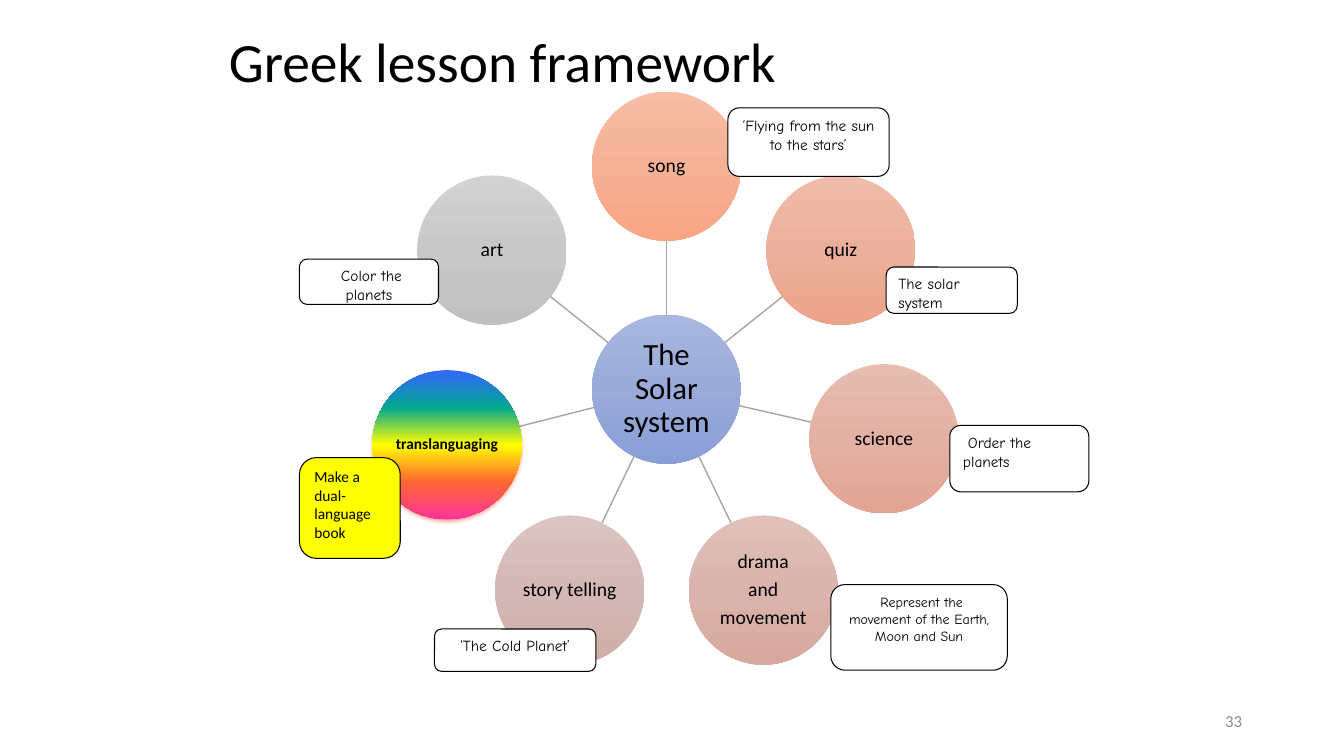
from dataclasses import dataclass
from math import cos, hypot, pi, sin

from lxml import etree
from pptx import Presentation
from pptx.dml.color import RGBColor
from pptx.enum.shapes import MSO_CONNECTOR, MSO_SHAPE
from pptx.enum.text import MSO_ANCHOR, MSO_AUTO_SIZE, PP_ALIGN
from pptx.oxml.ns import qn
from pptx.util import Inches, Pt

LEFT, CENTER, RIGHT = PP_ALIGN.LEFT, PP_ALIGN.CENTER, PP_ALIGN.RIGHT
TOP, MIDDLE = MSO_ANCHOR.TOP, MSO_ANCHOR.MIDDLE
OVAL, ROUNDED = MSO_SHAPE.OVAL, MSO_SHAPE.ROUNDED_RECTANGLE


@dataclass(frozen=True)
class Theme:
    body: str = "Calibri"
    note: str = "Comic Neue"
    ink: str = "000000"
    muted: str = "8C8C8C"
    spoke: str = "A5A5A5"
    paper: str = "FFFFFF"
    highlight: str = "FFFF00"
    glow: str = "FF0000"
    title_size: float = 39.6
    hub_size: int = 22
    topic_size: int = 14
    page_size: int = 12
    small_size: int = 11
    tiny_size: int = 10


THEME = Theme()
SLIDE_W, SLIDE_H = 13.33, 7.5

# Frames are left, top, width and height in percent of the slide
TITLE = ("Greek lesson framework", (16.28, 4, 67.52, 9.2))
PAGE_NUMBER = ("33", (70.67, 92.67, 22.5, 5.33))
HUB = ("The Solar system", ("A8B7DF", "9AABD9", "889ED7"))
RAINBOW = ("3366FF", "01A78F", "FFFF00", "FF6633", "FF3399")

# Clockwise from the top: lines of text, colours from top to bottom
TOPICS = [
    (["song"], ("F7BDA5", "F5B196", "F8A582")),
    (["quiz"], ("EFBCAA", "EBB09C", "ECA389")),
    (["science"], ("E7BDB1", "E2B1A3", "E1A493")),
    (["drama", "and", "movement"], ("E0C0B9", "DAB4AC", "D7A89E")),
    (["story telling"], ("DBC4C1", "D3B8B5", "CFAEA9")),
    (["translanguaging"], RAINBOW),
    (["art"], ("D2D2D2", "C8C8C8", "C0C0C0")),
]
NUDGES = {"translanguaging": (-0.02, 0.06)}

# Text, frame, alignment, first-line indent in inches
NOTES = [
    ("Color the planets", (22.28, 34.27, 10.35, 6), CENTER, 0.05),
    ("Make a dual-language book", (22.28, 60.53, 7.5, 13.33), LEFT, 0),
    ("‘Flying from the sun to the stars’", (54.16, 14.27, 12, 9.07), CENTER, 0),
    ("The solar system", (65.94, 35.33, 9.75, 6.13), LEFT, 0),
    ("Order the planets", (70.67, 56.27, 10.35, 8.8), LEFT, 0.05),
    ("Represent the movement of the Earth, Moon and Sun",
     (61.82, 77.33, 13.13, 11.33), CENTER, 0.05),
    ("‘The Cold Planet’", (32.33, 83.2, 12, 5.6), CENTER, 0),
]
NOTE_STYLES = {
    "Make a dual-language book": {"font": THEME.body, "fill": THEME.highlight},
    "Represent the movement of the Earth, Moon and Sun": {"size": THEME.tiny_size},
}

HUB_X, HUB_Y = 0.4959 * SLIDE_W, 0.5147 * SLIDE_H
RADIUS, RING = 0.74, 0.295 * SLIDE_H


def color(value):
    return RGBColor.from_string(value)


def place(frame):
    left, top, width, height = frame
    return (Inches(left / 100 * SLIDE_W), Inches(top / 100 * SLIDE_H),
            Inches(width / 100 * SLIDE_W), Inches(height / 100 * SLIDE_H))


def write(box, lines, size, font=THEME.body, ink=THEME.ink, bold=False,
          align=LEFT, anchor=TOP, margin=None, indent=0, **spacing):
    frame = box.text_frame
    settings = {"word_wrap": True, "auto_size": MSO_AUTO_SIZE.NONE,
                "vertical_anchor": anchor}
    if margin is not None:
        for side in ("left", "top", "right", "bottom"):
            settings[f"margin_{side}"] = Inches(margin)
    for name, value in settings.items():
        setattr(frame, name, value)
    for index, line in enumerate(lines):
        para = frame.add_paragraph() if index else frame.paragraphs[0]
        for name, value in {"alignment": align, **spacing}.items():
            setattr(para, name, value)
        if indent:
            para._p.get_or_add_pPr().set("indent", str(Inches(indent)))
        span = para.add_run()
        span.text = line
        for name, value in {"name": font, "size": Pt(size), "bold": bold}.items():
            setattr(span.font, name, value)
        span.font.color.rgb = color(ink)


def shade(shape, colors):
    """Fill from top to bottom with evenly spaced colours."""
    shape.fill.gradient()
    shape.fill.gradient_angle = 270
    stops = shape._element.spPr.find(".//" + qn("a:gsLst"))
    for stop in list(stops):
        stops.remove(stop)
    for index, value in enumerate(colors):
        position = round(100000 * index / (len(colors) - 1))
        stop = etree.SubElement(stops, qn("a:gs"), pos=str(position))
        etree.SubElement(stop, qn("a:srgbClr"), val=value)


def add_glow(shape):
    effects = shape._element.spPr.find(qn("a:effectLst"))
    shadow = etree.SubElement(
        effects, qn("a:outerShdw"), blurRad=str(Pt(3.1)), dist=str(Pt(1.6)),
        dir="5400000", rotWithShape="0")
    tint = etree.SubElement(shadow, qn("a:srgbClr"), val=THEME.glow)
    etree.SubElement(tint, qn("a:alpha"), val="38000")


def add_circle(page, x, y, lines, colors, size, bold=False):
    circle = page.shapes.add_shape(
        OVAL, Inches(x - RADIUS), Inches(y - RADIUS),
        Inches(2 * RADIUS), Inches(2 * RADIUS))
    circle.shadow.inherit = False
    circle.line.fill.background()
    shade(circle, colors)
    write(circle, lines, size, bold=bold, align=CENTER, anchor=MIDDLE,
          margin=0.01, line_spacing=0.9, space_after=Pt(0.35 * size))
    return circle


def add_spoke(page, x, y):
    """Join the rim of the hub to the rim of the circle centred at x, y."""
    dx, dy = x - HUB_X, y - HUB_Y
    length = hypot(dx, dy)
    ends = []
    for distance in (RADIUS, length - RADIUS):
        ends += [Inches(HUB_X + dx * distance / length),
                 Inches(HUB_Y + dy * distance / length)]
    spoke = page.shapes.add_connector(MSO_CONNECTOR.STRAIGHT, *ends)
    spoke.line.color.rgb = color(THEME.spoke)
    spoke.line.width = Pt(1)
    etree.SubElement(spoke._element.spPr, qn("a:effectLst"))


def add_note(page, text, frame, align, indent):
    style = {"font": THEME.note, "fill": THEME.paper, "size": THEME.small_size,
             **NOTE_STYLES.get(text, {})}
    note = page.shapes.add_shape(ROUNDED, *place(frame))
    note.shadow.inherit = False
    note.fill.solid()
    note.fill.fore_color.rgb = color(style["fill"])
    note.line.color.rgb = color(THEME.ink)
    note.line.width = Pt(0.75)
    write(note, [text], style["size"], font=style["font"], align=align, indent=indent)


def main():
    deck = Presentation()
    deck.slide_width, deck.slide_height = Inches(SLIDE_W), Inches(SLIDE_H)
    page = deck.slides.add_slide(deck.slide_layouts[5])

    text, frame = TITLE
    title = page.shapes.title
    title.left, title.top, title.width, title.height = place(frame)
    write(title, [text], THEME.title_size, anchor=MIDDLE, line_spacing=0.9)

    hub_text, hub_colors = HUB
    add_circle(page, HUB_X, HUB_Y, [hub_text], hub_colors, THEME.hub_size)
    for index, (lines, colors) in enumerate(TOPICS):
        angle = 2 * pi * index / len(TOPICS)
        shift_x, shift_y = NUDGES.get(lines[0], (0, 0))
        x = HUB_X + RING * sin(angle) + shift_x
        y = HUB_Y - RING * cos(angle) + shift_y
        special = colors == RAINBOW
        size = THEME.small_size if special else THEME.topic_size
        add_spoke(page, x, y)
        circle = add_circle(page, x, y, lines, colors, size, bold=special)
        if special:
            add_glow(circle)

    for note in NOTES:
        add_note(page, *note)

    text, frame = PAGE_NUMBER
    number = page.shapes.add_textbox(*place(frame))
    write(number, [text], THEME.page_size, ink=THEME.muted, align=RIGHT, anchor=MIDDLE)
    deck.save("out.pptx")


if __name__ == "__main__":
    main()
